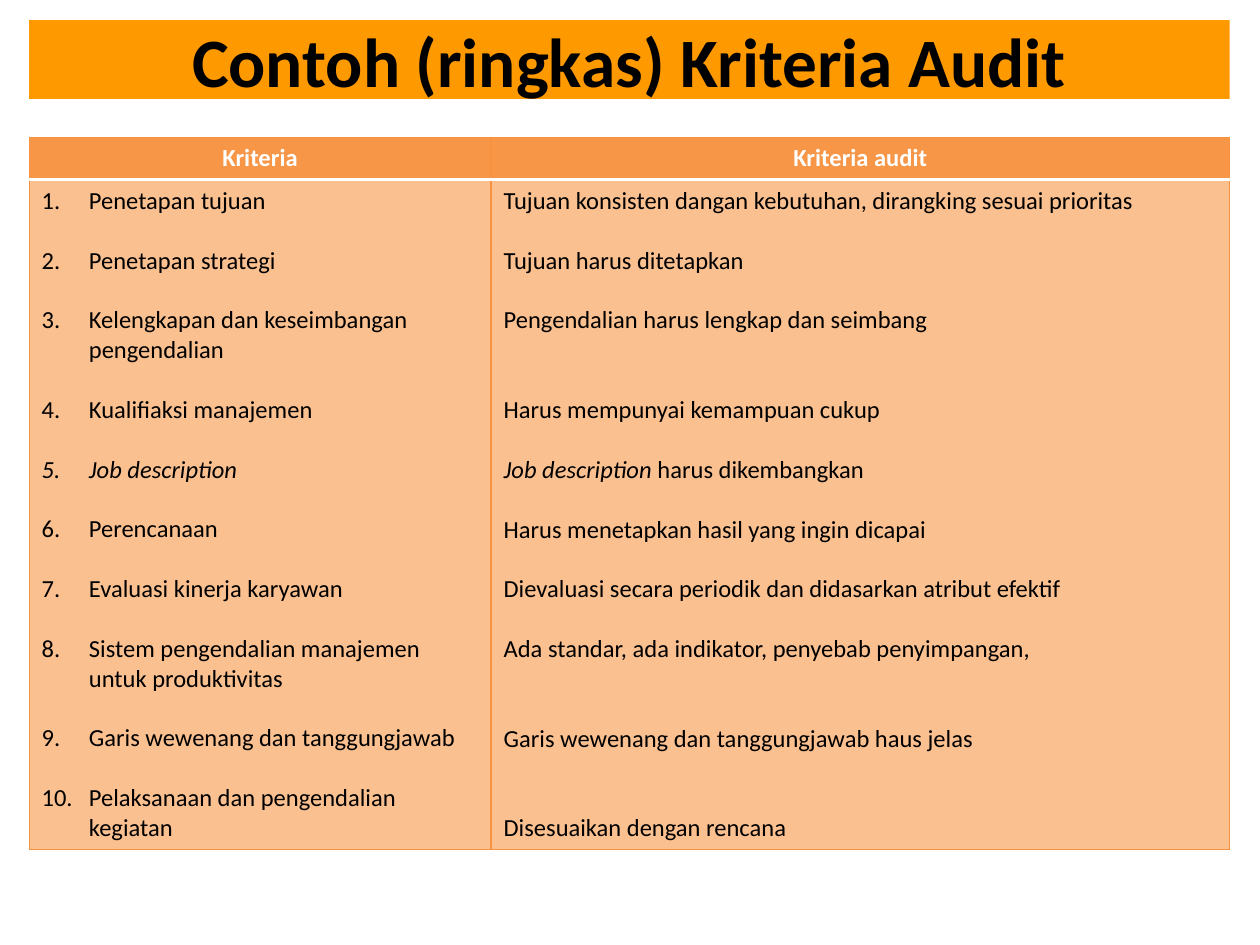
from typing import NamedTuple

from lxml.etree import SubElement
from pptx import Presentation
from pptx.dml.color import RGBColor
from pptx.enum.shapes import MSO_SHAPE
from pptx.enum.text import MSO_ANCHOR, PP_ALIGN
from pptx.oxml.ns import qn
from pptx.util import Pt

HUES = {"banner": "FF9900", "head": "F79646", "body": "FAC090",
        "edge": "F69240", "ink": "000000", "white": "FFFFFF"}
FONT = "Calibri"
SIZE = 14
LINE = 17.1
LEFT, WIDTH = 16.6, 686
INDENT = 27


class Run(NamedTuple):
    text: str
    slant: bool = False


class Item(NamedTuple):
    name: list[Run]
    test: list[Run]
    gap: int = 1


ITEMS = [
    Item([Run("Penetapan tujuan")],
         [Run("Tujuan konsisten dangan kebutuhan, dirangking sesuai prioritas")], 0),
    Item([Run("Penetapan strategi")], [Run("Tujuan harus ditetapkan")]),
    Item([Run("Kelengkapan dan keseimbangan pengendalian")],
         [Run("Pengendalian harus lengkap dan seimbang")]),
    Item([Run("Kualifiaksi manajemen")], [Run("Harus mempunyai kemampuan cukup")], 2),
    Item([Run("Job description", True)],
         [Run("Job description ", True), Run("harus dikembangkan")]),
    Item([Run("Perencanaan")], [Run("Harus menetapkan hasil yang ingin dicapai")]),
    Item([Run("Evaluasi kinerja karyawan")],
         [Run("Dievaluasi secara periodik dan didasarkan atribut efektif")]),
    Item([Run("Sistem pengendalian manajemen untuk produktivitas")],
         [Run("Ada standar, ada indikator, penyebab penyimpangan,")]),
    Item([Run("Garis wewenang dan tanggungjawab")],
         [Run("Garis wewenang dan tanggungjawab haus jelas")], 2),
    Item([Run("Pelaksanaan dan pengendalian kegiatan")],
         [Run("Disesuaikan dengan rencana")], 2),
]


def tint(name: str) -> RGBColor:
    """Return a named colour."""
    return RGBColor.from_string(HUES[name])


def write(para, runs: list[Run], size: float, hue: str, bold: bool = False) -> None:
    """Add styled runs to a paragraph."""
    for part in runs:
        run = para.add_run()
        run.text = part.text
        font = run.font
        font.name, font.size = FONT, Pt(size)
        font.bold, font.italic = bold, part.slant
        font.color.rgb = tint(hue)


def number(para) -> None:
    """Give a paragraph a hanging automatic number."""
    props = para._p.get_or_add_pPr()
    props.set("marL", str(Pt(INDENT)))
    props.set("indent", str(-Pt(INDENT)))
    SubElement(props, qn("a:buFont"), typeface="+mj-lt")
    SubElement(props, qn("a:buAutoNum"), type="arabicPeriod")


def edge(cell, side: str, hue: str, width: float) -> None:
    """Draw one border of a cell."""
    line = SubElement(cell._tc.get_or_add_tcPr(), qn(f"a:ln{side}"), w=str(Pt(width)))
    fill = SubElement(line, qn("a:solidFill"))
    SubElement(fill, qn("a:srgbClr"), val=HUES[hue])


def paint(cell, hue: str, top: tuple[str, float], base: tuple[str, float]) -> None:
    """Set the borders and fill of a cell."""
    thin = ("edge", 0.75)
    for side, pen in zip("LRTB", (thin, thin, top, base)):
        edge(cell, side, *pen)
    cell.fill.solid()
    cell.fill.fore_color.rgb = tint(hue)


def banner(slide, text: str) -> None:
    """Draw the title bar."""
    bar = slide.shapes.add_shape(MSO_SHAPE.RECTANGLE, Pt(LEFT), Pt(11.5), Pt(WIDTH), Pt(45))
    bar.shadow.inherit = False
    bar.fill.solid()
    bar.fill.fore_color.rgb = tint("banner")
    bar.line.fill.background()
    frame = bar.text_frame
    frame.word_wrap = True
    frame.vertical_anchor = MSO_ANCHOR.MIDDLE
    frame.margin_top = frame.margin_bottom = 0
    para = frame.paragraphs[0]
    para.alignment = PP_ALIGN.CENTER
    write(para, [Run(text)], 39.6, "ink", True)


def listing(cell, rows: list[list[Run]], gaps: list[int], count: bool) -> None:
    """Fill a cell with spaced paragraphs."""
    frame = cell.text_frame
    for pos, (runs, gap) in enumerate(zip(rows, gaps)):
        para = frame.add_paragraph() if pos else frame.paragraphs[0]
        para.space_before = Pt(gap * LINE)
        if count:
            number(para)
        write(para, runs, SIZE, "ink")


def grid(slide) -> None:
    """Draw the criteria table."""
    table = slide.shapes.add_table(2, 2, Pt(LEFT), Pt(78.5), Pt(WIDTH), Pt(406.3)).table
    table.horz_banding = False
    for col, width in zip(table.columns, (264, 422)):
        col.width = Pt(width)
    for row, height in zip(table.rows, (24.3, 382)):
        row.height = Pt(height)
    thin, rule = ("edge", 0.75), ("white", 2)
    for pos, text in enumerate(("Kriteria", "Kriteria audit")):
        head, body = table.cell(0, pos), table.cell(1, pos)
        paint(head, "head", thin, rule)
        paint(body, "body", rule, thin)
        para = head.text_frame.paragraphs[0]
        para.alignment = PP_ALIGN.CENTER
        write(para, [Run(text)], SIZE, "white", True)
    names = [item.name for item in ITEMS]
    tests = [item.test for item in ITEMS]
    listing(table.cell(1, 0), names, [min(item.gap, 1) for item in ITEMS], True)
    listing(table.cell(1, 1), tests, [item.gap for item in ITEMS], False)


def main() -> None:
    """Build and save the slide."""
    deck = Presentation()
    deck.slide_width, deck.slide_height = Pt(720), Pt(540)
    slide = deck.slides.add_slide(deck.slide_layouts[6])
    banner(slide, "Contoh (ringkas) Kriteria Audit")
    grid(slide)
    deck.save("out.pptx")


if __name__ == "__main__":
    main()
